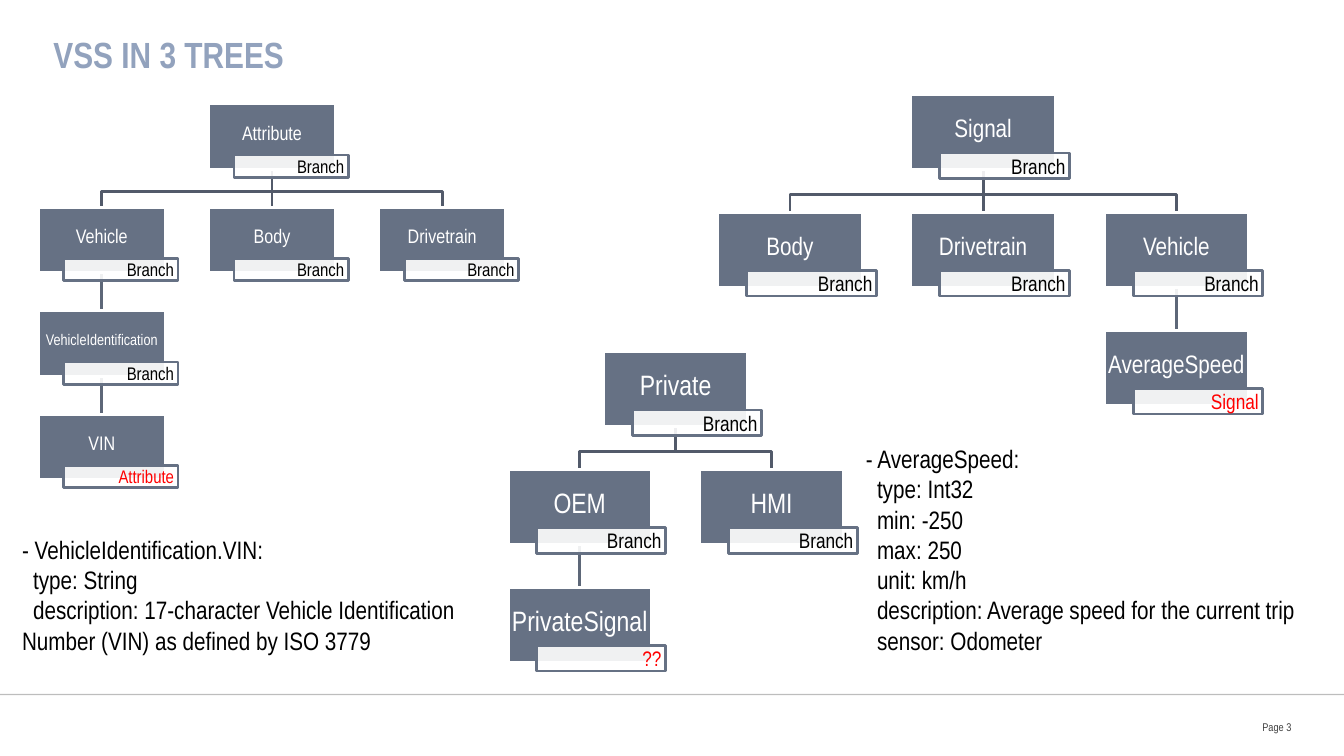
from dataclasses import dataclass

from pptx import Presentation
from pptx.dml.color import RGBColor
from pptx.enum.shapes import MSO_CONNECTOR as CONN, MSO_SHAPE as SHAPE
from pptx.enum.text import MSO_ANCHOR as ANCHOR, PP_ALIGN as ALIGN
from pptx.oxml.ns import qn
from pptx.util import Inches, Pt
from lxml.etree import SubElement


@dataclass(frozen=True)
class Theme:
    font: str = "Arial Narrow"
    title: str = "92A2BD"
    box: str = "667184"
    branch_line: str = "525A6A"
    deep_line: str = "5D6778"
    white: str = "FFFFFF"
    black: str = "000000"
    leaf: str = "FF0000"
    page: str = "404040"
    title_size: int = 26
    note_size: int = 18
    page_size: int = 8


@dataclass(frozen=True)
class Tree:
    left: float
    top: float
    width: float
    height: float
    name_size: int
    kind_size: int
    nodes: tuple


THEME = Theme()

TREES = (
    Tree(0.38, 1.03, 1.26, 0.65, 14, 13, (
        ("Attribute", "Branch", 1, 0, None),
        ("Vehicle", "Branch", 0, 1, "Attribute"),
        ("VehicleIdentification", "Branch", 0, 2, "Vehicle"),
        ("VIN", "Attribute", 0, 3, "VehicleIdentification"),
        ("Body", "Branch", 1, 1, "Attribute"),
        ("Drivetrain", "Branch", 2, 1, "Attribute"),
    )),
    Tree(7.12, 0.94, 1.43, 0.74, 18, 15, (
        ("Signal", "Branch", 1, 0, None),
        ("Body", "Branch", 0, 1, "Signal"),
        ("Drivetrain", "Branch", 1, 1, "Signal"),
        ("Vehicle", "Branch", 2, 1, "Signal"),
        ("AverageSpeed", "Signal", 2, 2, "Vehicle"),
    )),
    Tree(5.04, 3.49, 1.42, 0.74, 20, 15, (
        ("Private", "Branch", 0.5, 0, None),
        ("OEM", "Branch", 0, 1, "Private"),
        ("PrivateSignal", "??", 0, 2, "OEM"),
        ("HMI", "Branch", 1, 1, "Private"),
    )),
)
NAME_SIZES = {"VehicleIdentification": 11}

SPEED_NOTE = (
    "- AverageSpeed:", "type: Int32", "min: -250", "max: 250", "unit: km/h",
    "description: Average speed for the current trip", "sensor: Odometer",
)
VIN_NOTE = (
    "- VehicleIdentification.VIN:", "type: String",
    "description: 17-character Vehicle Identification Number (VIN) "
    "as defined by ISO 3779",
)


def rgb(value):
    return RGBColor.from_string(value)


def write(shape, lines, size, color, insets=(0, 0, 0, 0), align=ALIGN.LEFT,
          anchor=ANCHOR.MIDDLE, wrap=True, bold=False):
    tf = shape.text_frame
    sides = ("margin_left", "margin_top", "margin_right", "margin_bottom")
    frame = dict(zip(sides, map(Inches, insets)), vertical_anchor=anchor, word_wrap=wrap)
    for name, value in frame.items():
        setattr(tf, name, value)
    for i, line in enumerate(lines):
        p = tf.paragraphs[0] if i == 0 else tf.add_paragraph()
        p.alignment = align
        r = p.add_run()
        r.text = line
        for name, value in dict(name=THEME.font, size=Pt(size), bold=bold).items():
            setattr(r.font, name, value)
        r.font.color.rgb = rgb(color)
    return tf


def set_line(shape, color, width=2):
    shape.line.color.rgb = rgb(color)
    shape.line.width = Pt(width)


def set_opacity(shape, percent):
    color = shape.element.spPr.find(".//" + qn("a:srgbClr"))
    SubElement(color, qn("a:alpha")).set("val", str(percent * 1000))


def add_rect(s, at, fill, line):
    sp = s.shapes.add_shape(SHAPE.RECTANGLE, *map(Inches, at))
    sp.shadow.inherit = False
    sp.fill.solid()
    sp.fill.fore_color.rgb = rgb(fill)
    set_line(sp, line)
    return sp


def add_straight(s, start, end, color, width):
    line = s.shapes.add_connector(CONN.STRAIGHT, *map(Inches, start + end))
    set_line(line, color, width)
    SubElement(line.element.spPr, qn("a:effectLst"))
    return line


def add_link(s, parent, child, drop, color):
    x1, y1 = parent.left + parent.width // 2, parent.top + parent.height
    x2, y2 = child.left + child.width // 2, child.top
    if parent.left == child.left:
        link = add_straight(s, (0, 0), (0, 0), color, 2)
        link.begin_connect(parent, 2)
        link.end_connect(child, 0)
    else:
        bend = y1 + Inches(drop)
        builder = s.shapes.build_freeform(x1, y1)
        builder.add_line_segments([(x1, bend), (x2, bend), (x2, y2)], close=False)
        link = builder.convert_to_shape()
        link.shadow.inherit = False
        link.fill.background()
        set_line(link, color)
    s.shapes._spTree.insert(2, link.element)


def add_node(s, tree, name, kind, col, row):
    w, h = tree.width, tree.height
    x, y = tree.left + col * 1.34 * w, tree.top + row * 1.58 * h
    box = add_rect(s, (x, y, w, h), THEME.box, THEME.white)
    write(box, [name], NAME_SIZES.get(name, tree.name_size), THEME.white,
          (0.01, 0.01, 0.01, 0.14 * h), ALIGN.CENTER, wrap=False)
    tag = add_rect(s, (x + 0.2 * w, y + 0.78 * h, 0.9 * w, 0.34 * h),
                   THEME.white, THEME.box)
    set_opacity(tag, 90)
    write(tag, [kind], tree.kind_size, THEME.black if kind == "Branch" else THEME.leaf,
          (0.04, 0.01, 0.04, 0.01), ALIGN.RIGHT)
    return box


def add_tree(s, tree):
    boxes = {}
    for name, kind, col, row, parent in tree.nodes:
        boxes[name] = add_node(s, tree, name, kind, col, row)
        if parent:
            color = THEME.branch_line if row == 1 else THEME.deep_line
            add_link(s, boxes[parent], boxes[name], 0.34 * tree.height, color)


def add_note(s, at, lines):
    tb = s.shapes.add_textbox(*map(Inches, at))
    tf = write(tb, lines, THEME.note_size, THEME.black, (0.1, 0.05, 0.1, 0.05),
               anchor=ANCHOR.TOP)
    for p in tf.paragraphs[1:]:
        pPr = p._p.get_or_add_pPr()
        pPr.set("marL", "0")
        pPr.set("indent", str(Inches(0.11)))


def add_title(s, text):
    title = s.shapes.title
    at = dict(left=0.53, top=0.38, width=12.28, height=0.77)
    for name, value in at.items():
        setattr(title, name, Inches(value))
    tf = write(title, [text], THEME.title_size, THEME.title, anchor=ANCHOR.TOP, bold=True)
    tf.paragraphs[0].line_spacing = Pt(27)


def add_footer(s, text):
    rule = add_straight(s, (0, 6.89), (13.33, 6.89), THEME.black, 1)
    set_opacity(rule, 25)
    tb = s.shapes.add_textbox(*map(Inches, (11.58, 7.03, 1.23, 0.36)))
    write(tb, [text], THEME.page_size, THEME.page, align=ALIGN.RIGHT)


def main():
    prs = Presentation()
    prs.slide_width, prs.slide_height = Inches(13.33), Inches(7.5)
    s = prs.slides.add_slide(prs.slide_layouts[5])
    add_title(s, "VSS IN 3 TREES")
    add_footer(s, "Page 3")
    for tree in TREES:
        add_tree(s, tree)
    add_note(s, (8.49, 4.35, 4.72, 2.22), SPEED_NOTE)
    add_note(s, (0.12, 5.25, 4.71, 1.31), VIN_NOTE)
    prs.save("out.pptx")


if __name__ == "__main__":
    main()
